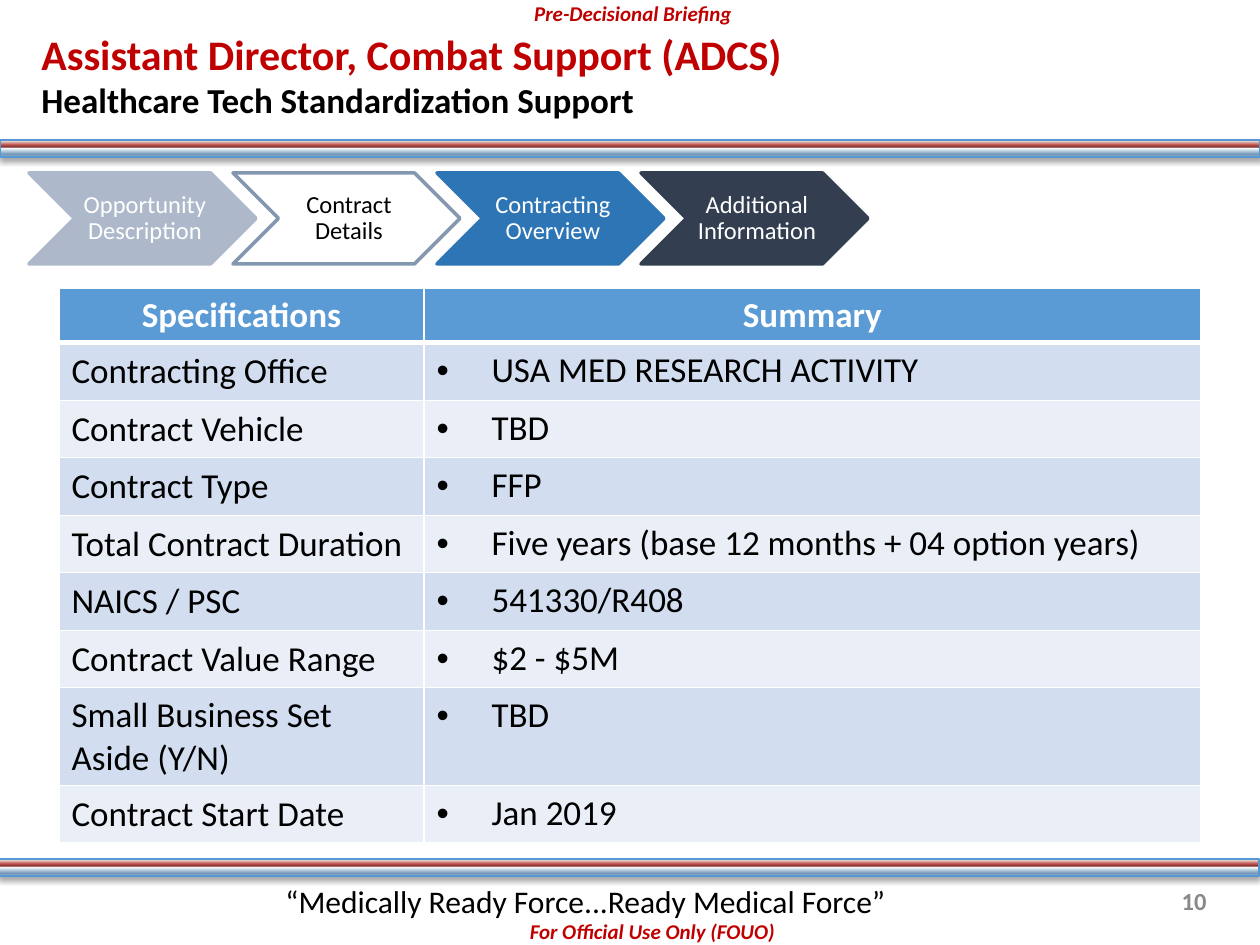
from lxml import etree
from pptx import Presentation
from pptx.dml.color import RGBColor
from pptx.enum.shapes import MSO_SHAPE
from pptx.enum.text import MSO_ANCHOR, PP_ALIGN
from pptx.oxml import parse_xml
from pptx.oxml.ns import nsdecls, qn
from pptx.util import Pt

PX = 914400 / 126


def px(value):
    return round(value * PX)


def style(target, size, color, bold=False, italic=False):
    font = target.font
    font.name, font.size, font.bold, font.italic = "Calibri", Pt(size), bold, italic
    font.color.rgb = RGBColor.from_string(color)


presentation = Presentation()
presentation.slide_width, presentation.slide_height = px(1260), px(945)
slide = presentation.slides.add_slide(presentation.slide_layouts[6])

# Striped bands
stops = [(0, "DCEBF5"), (8, "83A7C3"), (13, "768FB9"), (21, "83A7C3"), (52, "FFFFFF"),
         (56, "9C6563"), (58, "80302D"), (71, "C0524E"), (94, "EBDAD4"), (100, "55261C")]
stop_xml = "".join(f'<a:gs pos="{position * 1000}"><a:srgbClr val="{color}"/></a:gs>'
                   for position, color in stops)
for left, top in [(0, 140), (-1, 859)]:
    band = slide.shapes.add_shape(MSO_SHAPE.RECTANGLE, px(left), px(top), px(1260), px(17))
    band.line.color.rgb = RGBColor.from_string("5698D3")
    band.line.width = Pt(0.75)
    properties = band._element.spPr
    properties.find(qn("a:prstGeom")).addnext(parse_xml(
        f'<a:gradFill {nsdecls("a")} rotWithShape="1"><a:gsLst>{stop_xml}</a:gsLst>'
        '<a:lin ang="16200000" scaled="0"/></a:gradFill>'))
    properties.append(parse_xml(
        f'<a:effectLst {nsdecls("a")}><a:outerShdw blurRad="39370" dist="22860" dir="5400000" '
        'rotWithShape="0"><a:srgbClr val="000000"><a:alpha val="35000"/></a:srgbClr>'
        '</a:outerShdw></a:effectLst>'))

# Markings, motto and page number
labels = [
    ("For Official Use Only (FOUO)", (267, 912, 771, 38), PP_ALIGN.CENTER, 12, "C00000", True, True),
    ("Pre-Decisional Briefing", (510, -6, 246, 38), PP_ALIGN.CENTER, 12, "C00000", True, True),
    ("“Medically Ready Force...Ready Medical Force”", (273, 876, 725, 50),
     PP_ALIGN.LEFT, 18, "000000", False, False),
    ("10", (1135, 876, 84, 50), PP_ALIGN.RIGHT, 14, "898989", True, False),
]
for text, box, alignment, size, color, bold, italic in labels:
    frame = slide.shapes.add_textbox(*map(px, box)).text_frame
    frame.word_wrap = True
    frame.vertical_anchor = MSO_ANCHOR.MIDDLE
    paragraph = frame.paragraphs[0]
    paragraph.text = text
    paragraph.alignment = alignment
    style(paragraph, size, color, bold, italic)

# Title
frame = slide.shapes.add_textbox(px(29), px(18), px(969), px(113)).text_frame
frame.word_wrap = True
frame.vertical_anchor = MSO_ANCHOR.MIDDLE
frame.margin_top = frame.margin_bottom = 0
paragraph = frame.paragraphs[0]
run = paragraph.add_run()
run.text = "Assistant Director, Combat Support (ADCS)"
style(run, 24, "C00000", bold=True)
paragraph.add_line_break()
run = paragraph.add_run()
run.text = "Healthcare Tech Standardization Support"
style(run, 20, "000000", bold=True)

# Chevron steps
steps = [("Opportunity Description", "ADB9CA", "ADB9CA", "FFFFFF"),
         ("Contract Details", "FFFFFF", "8497B0", "000000"),
         ("Contracting Overview", "2E75B6", "2E75B6", "FFFFFF"),
         ("Additional Information", "333F50", "333F50", "FFFFFF")]
for index, (text, fill, line, color) in enumerate(steps):
    chevron = slide.shapes.add_shape(MSO_SHAPE.CHEVRON, px(29 + 204 * index), px(173),
                                     px(227), px(91))
    chevron.shadow.inherit = False
    chevron.fill.solid()
    chevron.fill.fore_color.rgb = RGBColor.from_string(fill)
    chevron.line.color.rgb = RGBColor.from_string(line)
    chevron.line.width = Pt(2)
    frame = chevron.text_frame
    frame.word_wrap = True
    frame.vertical_anchor = MSO_ANCHOR.MIDDLE
    frame.margin_left = px(7)
    frame.margin_top = frame.margin_right = frame.margin_bottom = px(2)
    paragraph = frame.paragraphs[0]
    paragraph.text = text
    paragraph.alignment = PP_ALIGN.CENTER
    paragraph.line_spacing = 0.9
    style(paragraph, 14, color)

# Specifications table
rows = [("Specifications", "Summary"),
        ("Contracting Office", "USA MED RESEARCH ACTIVITY"),
        ("Contract Vehicle", "TBD"),
        ("Contract Type", "FFP"),
        ("Total Contract Duration", "Five years (base 12 months + 04 option years)"),
        ("NAICS / PSC", "541330/R408"),
        ("Contract Value Range", "$2 - $5M"),
        ("Small Business Set Aside (Y/N)", "TBD"),
        ("Contract Start Date", "Jan 2019")]
heights = [54, 58, 57, 58, 57, 58, 57, 98, 57]
table = slide.shapes.add_table(len(rows), 2, px(59), px(288), px(1142), px(sum(heights))).table
for column, width in zip(table.columns, (365, 777)):
    column.width = px(width)

for row_index, texts in enumerate(rows):
    table.rows[row_index].height = px(heights[row_index])
    header = row_index == 0
    fill = "5B9BD5" if header else ("EAEFF7", "D2DEEF")[row_index % 2]
    for column_index, text in enumerate(texts):
        cell = table.cell(row_index, column_index)
        bulleted = column_index == 1 and not header
        cell.vertical_anchor = MSO_ANCHOR.TOP if bulleted else MSO_ANCHOR.MIDDLE
        cell_properties = cell._tc.get_or_add_tcPr()
        for side in "LRTB":
            thick = (header and side == "B") or (row_index == 1 and side == "T")
            cell_properties.append(parse_xml(
                f'<a:ln{side} {nsdecls("a")} w="{Pt(3 if thick else 1)}"><a:solidFill>'
                f'<a:srgbClr val="FFFFFF"/></a:solidFill></a:ln{side}>'))
        cell.fill.solid()
        cell.fill.fore_color.rgb = RGBColor.from_string(fill)
        paragraph = cell.text_frame.paragraphs[0]
        paragraph.text = text
        paragraph.alignment = PP_ALIGN.CENTER if header else PP_ALIGN.LEFT
        if bulleted:
            paragraph_properties = paragraph._p.get_or_add_pPr()
            paragraph_properties.set("marL", str(px(55)))
            paragraph_properties.set("indent", str(px(-55)))
            etree.SubElement(paragraph_properties, qn("a:buFont"), typeface="Arial")
            etree.SubElement(paragraph_properties, qn("a:buChar"), char="•")
        style(paragraph, 20, "FFFFFF" if header else "000000", bold=header)

presentation.save("out.pptx")
